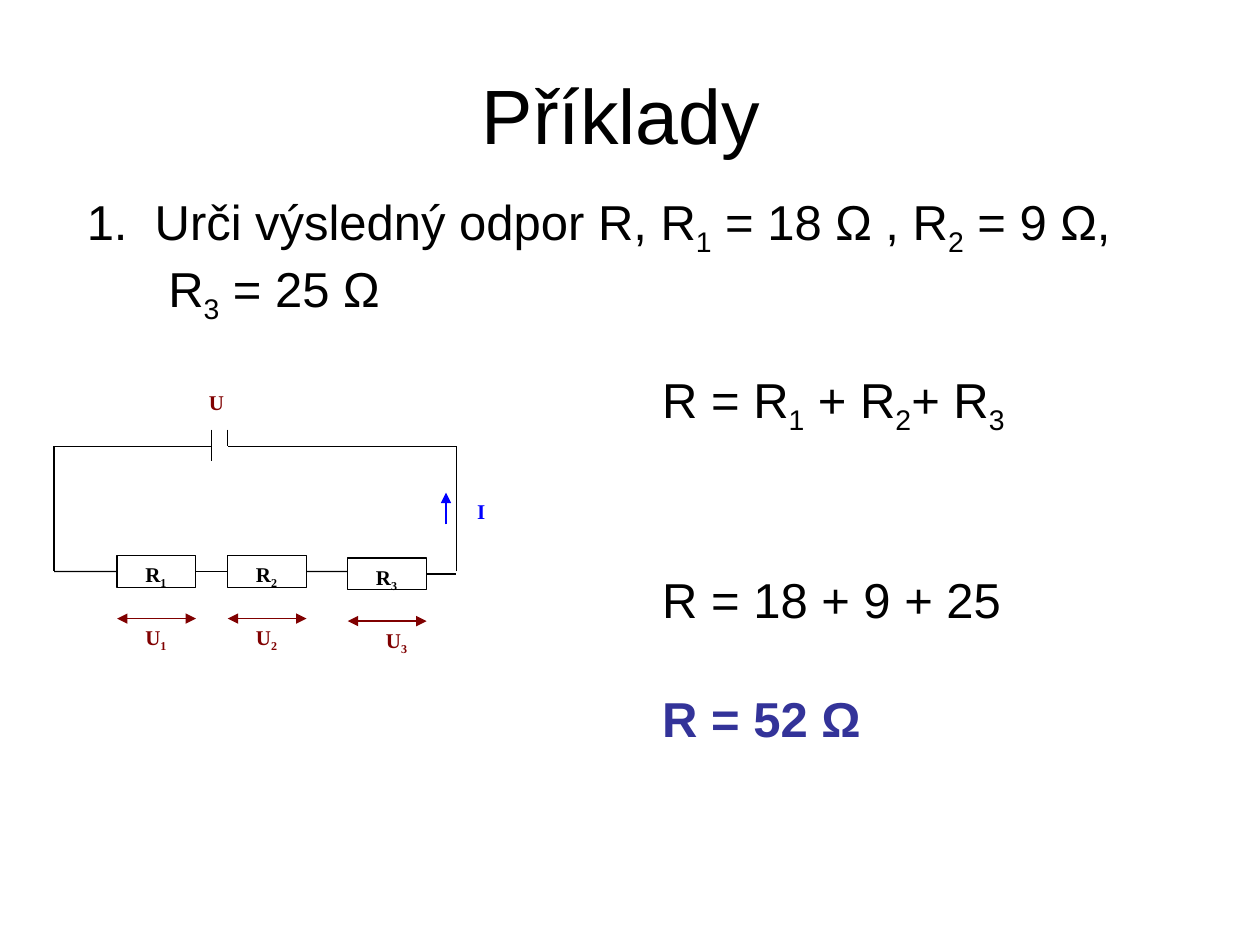
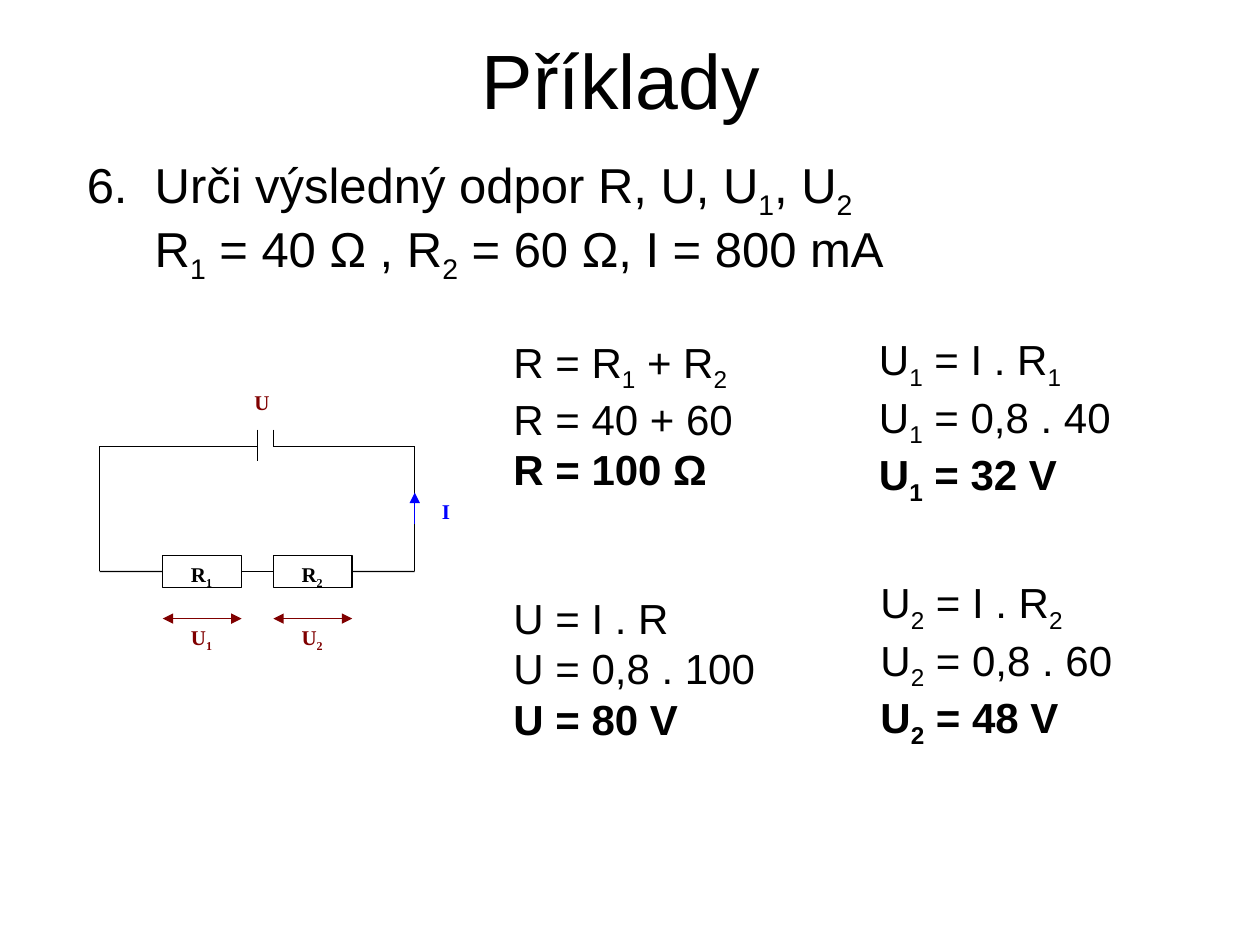
from dataclasses import dataclass

from lxml import etree
from pptx import Presentation
from pptx import util as u
from pptx.dml.color import RGBColor
from pptx.enum import shapes, text
from pptx.oxml import ns

COLOURS = {"ink": "000000", "paper": "FFFFFF", "voltage": "800000",
           "current": "0000FF", "result": "333399"}
TITLE_FONT = {"name": "Arial", "size": u.Pt(44), "bold": False}
PROBLEM_FONT = {"name": "Arial", "size": u.Pt(28), "bold": False}
STEP_FONT = {"name": "Arial", "size": u.Pt(24), "bold": False}
LABEL_FONT = {"name": "Times New Roman", "size": u.Pt(12), "bold": True}

HANG = 1.37
WIRE_TOP, WIRE_BOTTOM = 9.0, 11.52
RESISTOR_WIDTH, RESISTOR_HEIGHT = 1.59, 0.64
PLATES = (3.18, 3.5)
VOLTAGE_DROP = 1.27


@dataclass
class Line:
    """One paragraph; an underscore lowers the character after it."""
    wording: str
    bold: bool = False
    colour: str = "ink"
    before: float = 0


@dataclass
class Block:
    left: float
    top: float
    width: float
    height: float
    font: dict
    lines: list[Line]
    anchor: text.MSO_ANCHOR = text.MSO_ANCHOR.MIDDLE


@dataclass
class Resistor:
    offset: float
    drop: float = 0
    voltage_shift: float = 0


@dataclass
class Circuit:
    left: float
    right: float
    current_left: float
    current_label_left: float
    resistors: list[Resistor]


@dataclass
class Example:
    title_top: float
    problem_top: float
    problem: list[str]
    spacing: float
    blocks: list[Block]
    circuit: Circuit


def rgb(colour: str) -> RGBColor:
    return RGBColor.from_string(COLOURS[colour])


def apply(target, values: dict) -> None:
    for name, value in values.items():
        setattr(target, name, value)


def write(para, wording: str, font: dict, colour: str = "ink") -> None:
    """Add runs, lowering the character after each underscore."""
    for row, line in enumerate(wording.split("\n")):
        if row:
            para.add_line_break()
        first, *others = line.split("_")
        pieces = [(first, False)]
        for other in others:
            pieces += [(other[0], True), (other[1:], False)]
        for piece, lowered in pieces:
            if not piece:
                continue
            span = para.add_run()
            span.text = piece
            apply(span.font, font)
            span.font.color.rgb = rgb(colour)
            if lowered:
                span._r.get_or_add_rPr().set("baseline", "-25000")


def add_box(page, left: float, top: float, width: float, height: float, **frame_format):
    box = page.shapes.add_textbox(u.Cm(left), u.Cm(top), u.Cm(width), u.Cm(height))
    apply(box.text_frame, {"word_wrap": True} | frame_format)
    return box.text_frame


def paragraphs(frame, items: list):
    """Yield each item with its paragraph, starting with the one already there."""
    for index, item in enumerate(items):
        yield (frame.add_paragraph() if index else frame.paragraphs[0]), item


def add_label(page, wording: str, colour: str, left: float, top: float,
              width: float = 1.27, height: float = 0.95) -> None:
    frame = add_box(page, left, top, width, height)
    write(frame.paragraphs[0], wording, LABEL_FONT, colour)


def add_wire(page, start: tuple[float, float], end: tuple[float, float],
             colour: str = "ink", arrows: tuple[str, ...] = ()):
    points = [u.Cm(value) for value in (*start, *end)]
    wire = page.shapes.add_connector(shapes.MSO_CONNECTOR.STRAIGHT, *points)
    wire.line.color.rgb = rgb(colour)
    wire.line.width = u.Pt(0.75)
    for arrow in arrows:
        etree.SubElement(wire.line._get_or_add_ln(), ns.qn(f"a:{arrow}"), type="triangle")
    etree.SubElement(wire._element.spPr, ns.qn("a:effectLst"))
    return wire


def add_resistor(page, left: float, resistor: Resistor, number: int):
    """Draw the resistor with its label and its voltage arrow."""
    top = WIRE_BOTTOM - RESISTOR_HEIGHT / 2 + resistor.drop
    box = page.shapes.add_shape(shapes.MSO_SHAPE.RECTANGLE, u.Cm(left), u.Cm(top),
                                u.Cm(RESISTOR_WIDTH), u.Cm(RESISTOR_HEIGHT))
    box.shadow.inherit = False
    box.fill.solid()
    box.fill.fore_color.rgb = rgb("paper")
    box.line.color.rgb = rgb("ink")
    box.line.width = u.Pt(0.75)
    voltage_top = top + VOLTAGE_DROP
    add_wire(page, (left, voltage_top), (left + RESISTOR_WIDTH, voltage_top),
             "voltage", ("headEnd", "tailEnd"))
    add_label(page, f"R_{number}", "ink", left + 0.32, top)
    add_label(page, f"U_{number}", "voltage",
              left + 0.32 + resistor.voltage_shift, voltage_top)
    return box


def add_circuit(page, circuit: Circuit) -> None:
    left, right = circuit.left, circuit.right
    long_plate, short_plate = (left + offset for offset in PLATES)
    for start, end in (
        ((left, WIRE_TOP), (left, WIRE_BOTTOM)),
        ((left, WIRE_TOP), (long_plate, WIRE_TOP)),
        ((right, WIRE_BOTTOM), (right, WIRE_TOP)),
        ((right, WIRE_TOP), (short_plate, WIRE_TOP)),
        ((long_plate, 8.66), (long_plate, 9.3)),
        ((short_plate, 8.66), (short_plate, WIRE_TOP)),
    ):
        add_wire(page, start, end)

    wire_left, wire_level, previous = left, WIRE_BOTTOM, None
    for number, resistor in enumerate(circuit.resistors, 1):
        resistor_left = left + resistor.offset
        box = add_resistor(page, resistor_left, resistor, number)
        wire = add_wire(page, (wire_left, wire_level), (resistor_left, wire_level))
        if previous is not None:
            wire.begin_connect(previous, 3)
        if not resistor.drop:
            wire.end_connect(box, 1)
        wire_left = resistor_left + RESISTOR_WIDTH
        wire_level, previous = WIRE_BOTTOM + resistor.drop, box
    add_wire(page, (wire_left, wire_level), (right, wire_level)).begin_connect(previous, 3)

    add_wire(page, (circuit.current_left, 10.57), (circuit.current_left, 9.93),
             "current", ("tailEnd",))
    add_label(page, "I", "current", circuit.current_label_left, 9.93, 0.64, 0.64)
    add_label(page, "U", "voltage", left + 2.87, 7.72, 0.95)


def add_title(page, top: float) -> None:
    title = page.shapes.title
    apply(title, {"left": u.Cm(1.09), "top": u.Cm(top),
                  "width": u.Cm(22.86), "height": u.Cm(3.18)})
    title.text_frame.vertical_anchor = text.MSO_ANCHOR.MIDDLE
    para = title.text_frame.paragraphs[0]
    para.alignment = text.PP_ALIGN.CENTER
    write(para, "Příklady", TITLE_FONT)


def add_problem(page, example: Example) -> None:
    frame = add_box(page, 1.5, example.problem_top, 22.4, 2.39)
    for para, wording in paragraphs(frame, example.problem):
        apply(para, {"space_before": u.Pt(5.6), "line_spacing": example.spacing})
        properties = para._p.get_or_add_pPr()
        properties.set("marL", str(u.Cm(HANG)))
        properties.set("indent", str(u.Cm(-HANG if "\t" in wording else 0)))
        write(para, wording, PROBLEM_FONT)


def add_block(page, block: Block) -> None:
    frame = add_box(page, block.left, block.top, block.width, block.height,
                    word_wrap=False, vertical_anchor=block.anchor,
                    auto_size=text.MSO_AUTO_SIZE.SHAPE_TO_FIT_TEXT)
    for para, line in paragraphs(frame, block.lines):
        para.space_before = u.Pt(line.before)
        write(para, line.wording, block.font | {"bold": line.bold}, line.colour)


def steps(left: float, top: float, width: float, *wordings: str,
          anchor: text.MSO_ANCHOR = text.MSO_ANCHOR.MIDDLE) -> Block:
    """A calculation whose last line, the result, is bold."""
    lines = [Line(wording, bold=wording == wordings[-1]) for wording in wordings]
    return Block(left, top, width, 3.33, STEP_FONT, lines, anchor)


EXAMPLES = [
    Example(
        0.71, 3.73,
        ["1.\tUrči výsledný odpor R, R_1 = 18 Ω , R_2 = 9 Ω,\n R_3 = 25 Ω"], 1.0,
        [Block(13.1, 7.32, 7.65, 6.63, PROBLEM_FONT, [
            Line("R = R_1 + R_2+ R_3"),
            Line("R = 18 + 9 + 25", before=76),
            Line("R = 52 Ω", bold=True, colour="result", before=34.5),
        ], text.MSO_ANCHOR.TOP)],
        Circuit(1.09, 9.2, 8.99, 9.37,
                [Resistor(1.27), Resistor(3.5), Resistor(5.92, 0.05, 0.2)]),
    ),
    Example(
        0, 3.12,
        ["6.\tUrči výsledný odpor R, U, U_1, U_2",
         "R_1 = 40 Ω , R_2 = 60 Ω, I = 800 mA"], 0.8,
        [
            steps(10.1, 11.8, 5.44, "U = I . R", "U = 0,8 . 100", "U = 80 V"),
            steps(10.1, 6.65, 4.98, "R = R_1 + R_2", "R = 40 + 60", "R = 100 Ω",
                  anchor=text.MSO_ANCHOR.TOP),
            steps(17.47, 6.8, 5.26, "U_1 = I . R_1", "U_1 = 0,8 . 40", "U_1 = 32 V"),
            steps(17.5, 11.7, 5.26, "U_2 = I . R_2", "U_2 = 0,8 . 60", "U_2 = 48 V"),
        ],
        Circuit(2.01, 8.36, 8.36, 8.66, [Resistor(1.27), Resistor(3.5)]),
    ),
]


def main() -> None:
    deck = Presentation()
    apply(deck, {"slide_width": u.Cm(25.4), "slide_height": u.Cm(19.05)})
    for example in EXAMPLES:
        page = deck.slides.add_slide(deck.slide_layouts[5])
        add_title(page, example.title_top)
        add_problem(page, example)
        for block in example.blocks:
            add_block(page, block)
        add_circuit(page, example.circuit)
    deck.save("out.pptx")


if __name__ == "__main__":
    main()
